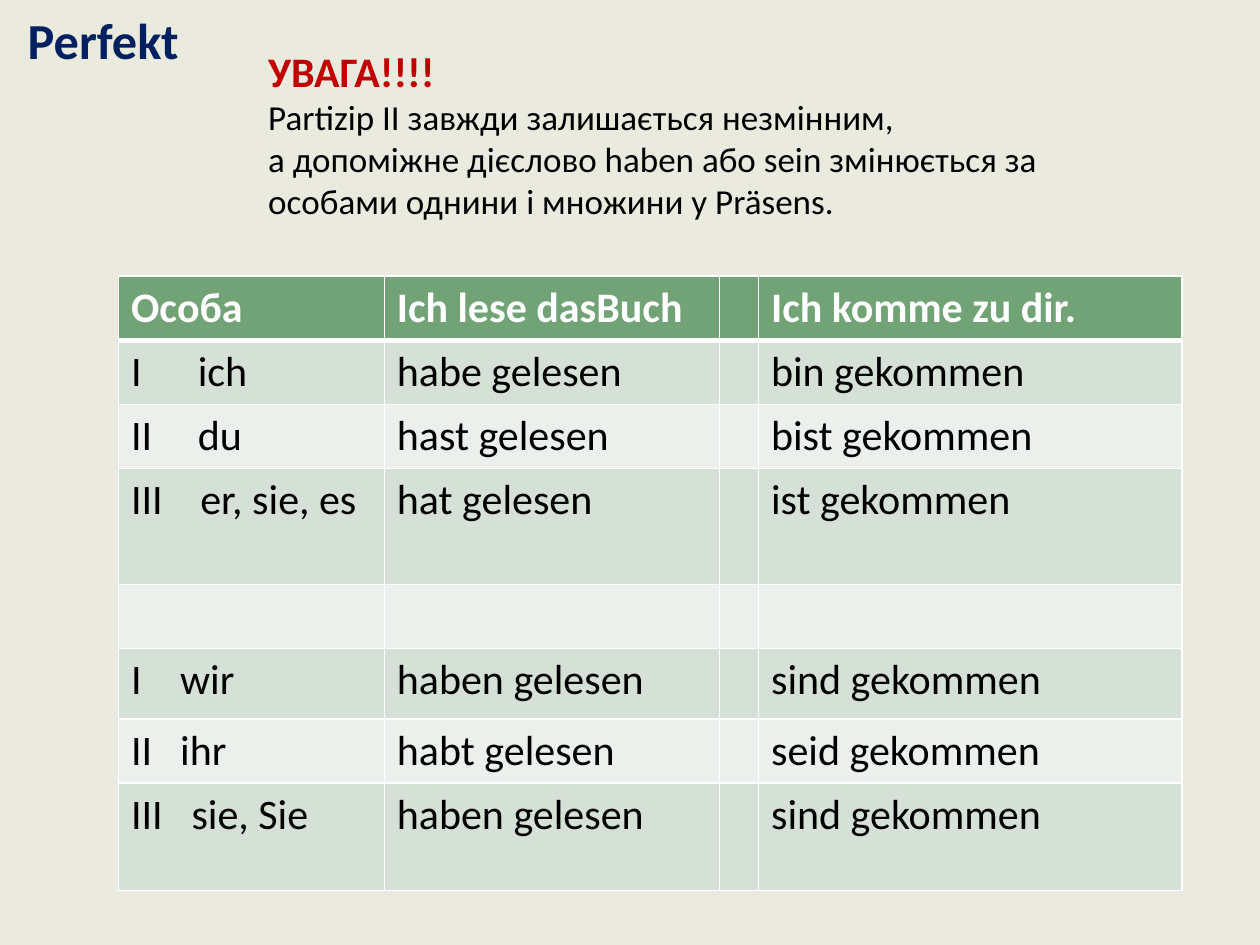
from lxml import etree
from pptx import Presentation
from pptx import util as u
from pptx.dml.color import RGBColor
from pptx.enum import text
from pptx.oxml import ns

INK = {"back": "EAEBDE", "navy": "002060", "red": "C00000", "black": "000000",
       "white": "FFFFFF", "head": "72A376", "odd": "D5E0D6", "even": "EBF0EC"}
TITLE = "Perfekt"
NOTE = [
    ("УВАГА!!!!", 24, "red", True),
    ("Partizip II завжди залишається незмінним,", 20, "black", False),
    ("а допоміжне дієслово haben або sein змінюється за особами однини і множини у Präsens.",
     20, "black", False),
]
ROWS = [
    (0.51, 0, ("Особа", "Ich lese dasBuch", "", "Ich komme zu dir.")),
    (0.51, 0.53, ("I\tich", "habe gelesen", "", "bin gekommen")),
    (0.51, 0.53, ("II\tdu", "hast gelesen", "", "bist gekommen")),
    (0.92, 0.55, ("III\ter, sie, es", "hat gelesen", "", "ist gekommen")),
    (0.5, 0, ("", "", "", "")),
    (0.56, 0.39, ("I\twir", "haben gelesen", "", "sind gekommen")),
    (0.51, 0.39, ("II\tihr", "habt gelesen", "", "seid gekommen")),
    (0.85, 0.48, ("III\tsie, Sie", "haben gelesen", "", "sind gekommen")),
]
COLS = [2.11, 2.66, 0.31, 3.36]


def rgb(name):
    return RGBColor.from_string(INK[name])


def style(para, size, ink, bold):
    form = {"name": "Calibri", "size": u.Pt(size), "bold": bold}
    for key, val in form.items():
        setattr(para.font, key, val)
    para.font.color.rgb = rgb(ink)


def place(item, *box):
    for key, val in zip(("left", "top", "width", "height"), box):
        setattr(item, key, u.Inches(val))


def edge(cell, row):
    props = cell._tc.get_or_add_tcPr()
    wide = {"lnT": 3 if row == 1 else 1, "lnB": 3 if row == 0 else 1}
    for spot, tag in enumerate(("lnL", "lnR", "lnT", "lnB")):
        line = etree.Element(ns.qn("a:" + tag), w=str(u.Pt(wide.get(tag, 1))))
        fill = etree.SubElement(line, ns.qn("a:solidFill"))
        etree.SubElement(fill, ns.qn("a:srgbClr"), val=INK["white"])
        props.insert(spot, line)


def tab(para, gap):
    stops = etree.Element(ns.qn("a:tabLst"))
    etree.SubElement(stops, ns.qn("a:tab"), pos=str(u.Inches(gap)), algn="l")
    props = para._p.get_or_add_pPr()
    props.insert(0, stops)


def main():
    deck = Presentation()
    deck.slide_width, deck.slide_height = u.Inches(10), u.Inches(7.5)
    slide = deck.slides.add_slide(deck.slide_layouts[5])
    slide.background.fill.solid()
    slide.background.fill.fore_color.rgb = rgb("back")

    title = slide.shapes.title
    place(title, 0, 0, 1.64, 0.62)
    title.text_frame.text = TITLE
    title.text_frame.vertical_anchor = text.MSO_ANCHOR.MIDDLE
    para = title.text_frame.paragraphs[0]
    para.alignment = text.PP_ALIGN.CENTER
    style(para, 28.8, "navy", True)

    high = sum(row[0] for row in ROWS)
    box = [u.Inches(n) for n in (0.94, 2.19, sum(COLS), high)]
    table = slide.shapes.add_table(len(ROWS), len(COLS), *box).table
    for col, wide in zip(table.columns, COLS):
        col.width = u.Inches(wide)
    for r, (tall, gap, words) in enumerate(ROWS):
        table.rows[r].height = u.Inches(tall)
        shade = "head" if r == 0 else ("even", "odd")[r % 2]
        for c, word in enumerate(words):
            cell = table.cell(r, c)
            cell.text = word
            cell.fill.solid()
            cell.fill.fore_color.rgb = rgb(shade)
            edge(cell, r)
            para = cell.text_frame.paragraphs[0]
            style(para, 24, "black" if r else "white", r == 0)
            if "\t" in word:
                tab(para, gap)

    note = slide.shapes.add_textbox(*[u.Inches(n) for n in (2.03, 0.31, 7.19, 1.51)])
    frame = note.text_frame
    frame.word_wrap = True
    frame.auto_size = text.MSO_AUTO_SIZE.SHAPE_TO_FIT_TEXT
    frame.text = "\n".join(line[0] for line in NOTE)
    for para, line in zip(frame.paragraphs, NOTE):
        style(para, *line[1:])

    deck.save("out.pptx")


if __name__ == "__main__":
    main()
